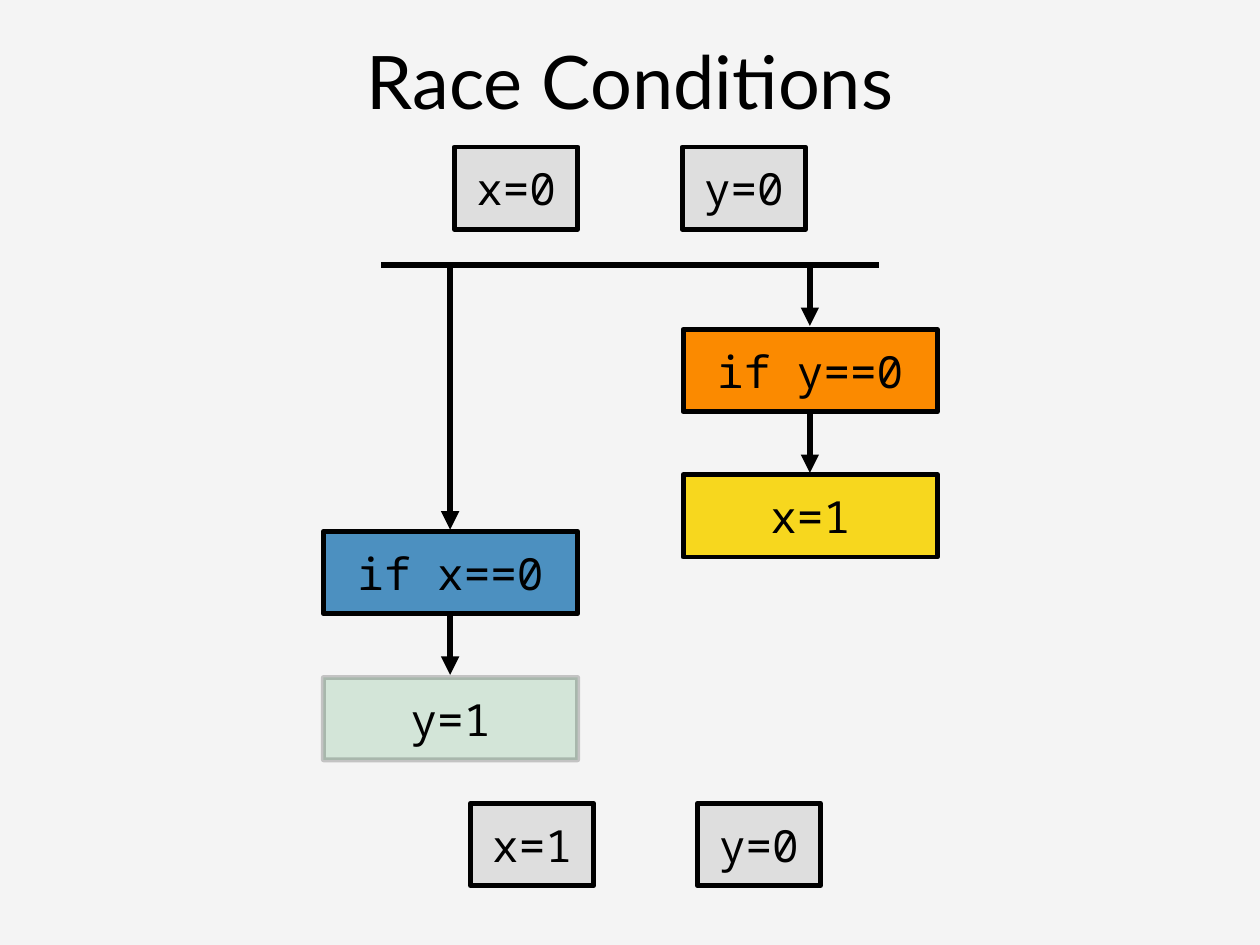
"""Build the Race Conditions slide: two threads, their steps and the shared variables."""
from lxml import etree
from pptx import Presentation
from pptx.dml.color import RGBColor
from pptx.enum.shapes import MSO_CONNECTOR, MSO_SHAPE
from pptx.enum.text import MSO_ANCHOR, PP_ALIGN
from pptx.oxml.ns import qn
from pptx.util import Inches, Pt

COLORS = {
    "background": "F4F4F4",
    "ink": "000000",
    "variable": "DEDEDE",
    "check_x": "4C90C0",
    "check_y": "FB8A00",
    "set_x": "F7D71E",
    "set_y": "50AD6C",
}
STEP_WIDTH, VARIABLE_WIDTH, BOX_HEIGHT = 2.87, 1.39, 0.93
LEFT_THREAD, RIGHT_THREAD = 5.08, 9.14
FORK_Y = 2.99


def color(name):
    return RGBColor.from_string(COLORS[name])


def write(frame, text, font, size):
    frame.text = text
    frame.word_wrap = True
    frame.vertical_anchor = MSO_ANCHOR.MIDDLE
    frame.margin_left = frame.margin_right = Inches(0.06)
    frame.margin_top = frame.margin_bottom = Inches(0.06)
    frame.paragraphs[0].alignment = PP_ALIGN.CENTER
    run_font = frame.paragraphs[0].runs[0].font
    run_font.name, run_font.size = font, Pt(size)
    run_font.color.rgb = color("ink")


prs = Presentation()
prs.slide_width, prs.slide_height = Inches(14.22), Inches(10.67)
slide = prs.slides.add_slide(prs.slide_layouts[5])
slide.background.fill.solid()
slide.background.fill.fore_color.rgb = color("background")

title = slide.shapes.title
title.left, title.top = Inches(1.04), Inches(0.09)
title.width, title.height = Inches(12.14), Inches(1.63)
write(title.text_frame, "Race Conditions", "Lato", 60)

boxes = [
    ("x=0", 5.13, 1.66, VARIABLE_WIDTH, "variable"),
    ("y=0", 7.7, 1.66, VARIABLE_WIDTH, "variable"),
    ("if x==0", 3.65, 6, STEP_WIDTH, "check_x"),
    ("y=1", 3.65, 7.65, STEP_WIDTH, "set_y"),
    ("if y==0", 7.71, 3.72, STEP_WIDTH, "check_y"),
    ("x=1", 7.71, 5.36, STEP_WIDTH, "set_x"),
    ("x=1", 5.31, 9.07, VARIABLE_WIDTH, "variable"),
    ("y=0", 7.87, 9.07, VARIABLE_WIDTH, "variable"),
]
for text, left, top, width, role in boxes:
    box = slide.shapes.add_shape(
        MSO_SHAPE.RECTANGLE, Inches(left), Inches(top), Inches(width), Inches(BOX_HEIGHT)
    )
    box.shadow.inherit = False
    box.fill.solid()
    box.fill.fore_color.rgb = color(role)
    box.line.color.rgb = color("ink")
    box.line.width = Pt(4)
    write(box.text_frame, text, "Noto Sans Mono", 36)
    if role == "set_y":
        for tint in box._element.spPr.iter(qn("a:srgbClr")):
            etree.SubElement(tint, qn("a:alpha"), val="20000")

lines = [
    (4.3, FORK_Y, 9.92, FORK_Y, False),
    (LEFT_THREAD, FORK_Y, LEFT_THREAD, 5.98, True),
    (LEFT_THREAD, 6.92, LEFT_THREAD, 7.62, True),
    (RIGHT_THREAD, FORK_Y, RIGHT_THREAD, 3.68, True),
    (RIGHT_THREAD, 4.63, RIGHT_THREAD, 5.34, True),
]
for x1, y1, x2, y2, has_arrow in lines:
    flow = slide.shapes.add_connector(
        MSO_CONNECTOR.STRAIGHT, Inches(x1), Inches(y1), Inches(x2), Inches(y2)
    )
    flow.line.color.rgb = color("ink")
    flow.line.width = Pt(5)
    if has_arrow:
        etree.SubElement(flow.line._get_or_add_ln(), qn("a:tailEnd"), type="triangle")
    etree.SubElement(flow._element.spPr, qn("a:effectLst"))

prs.save("out.pptx")
